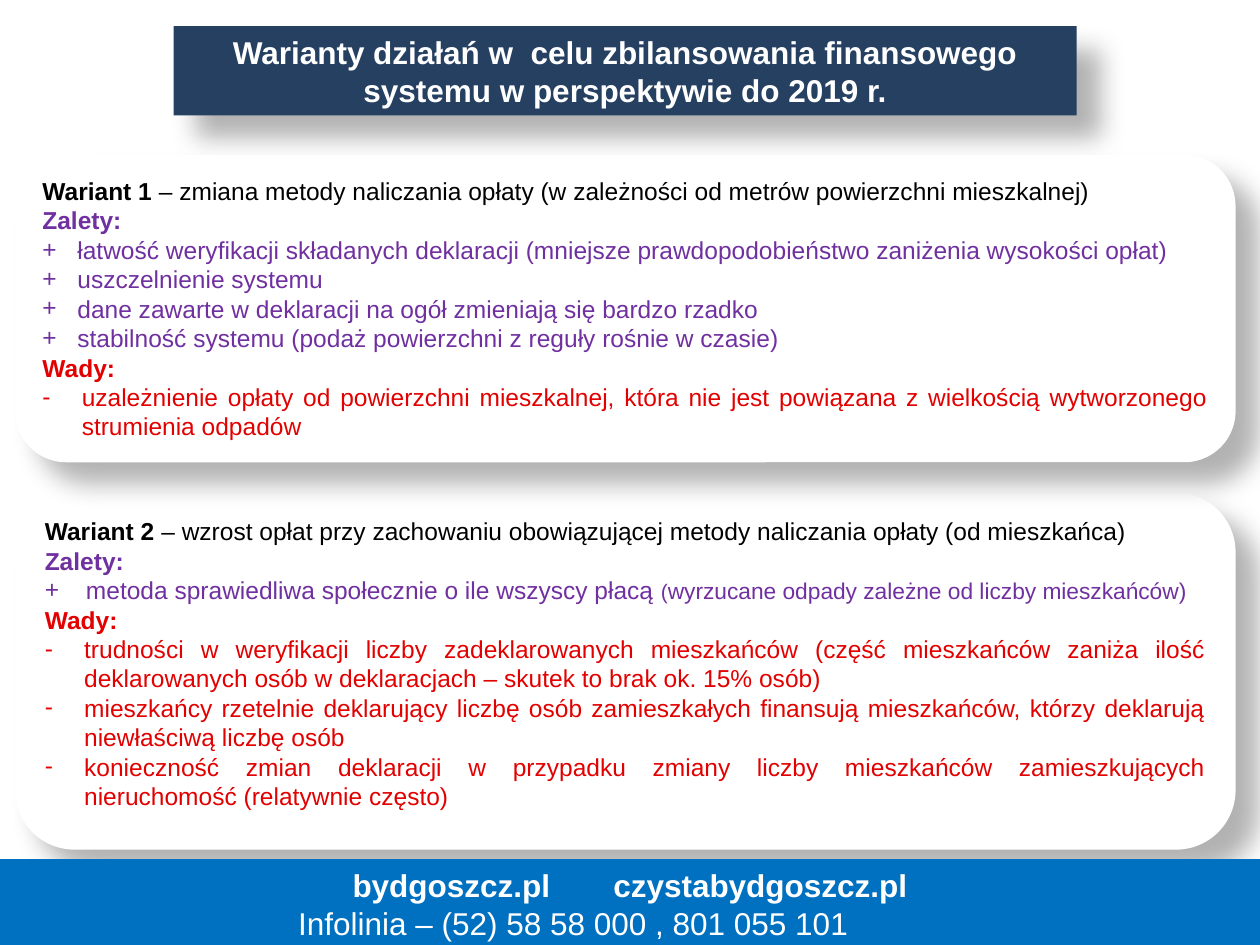
from lxml.etree import SubElement
from pptx import Presentation
from pptx.dml.color import RGBColor
from pptx.enum.shapes import MSO_SHAPE
from pptx.enum.text import MSO_ANCHOR, MSO_AUTO_SIZE, PP_ALIGN
from pptx.oxml.ns import qn
from pptx.util import Pt

COLORS = {
    "title": "254061",
    "card": "FFFFFF",
    "footer": "0070C0",
    "light": "FFFFFF",
    "dark": "000000",
    "advantage": "7030A0",
    "drawback": "E20000",
    "shadow": "000000",
}
FONT = "Arial"
BODY_SIZE = 14
HEADING_SIZE = 18
DASH_INDENT = 22.5

VARIANT_1 = {
    "name": "Wariant 1 ",
    "summary": "– zmiana metody naliczania opłaty (w zależności od metrów powierzchni mieszkalnej)",
    "advantages": [
        [("łatwość weryfikacji składanych deklaracji (mniejsze prawdopodobieństwo "
          "zaniżenia wysokości opłat)", BODY_SIZE)],
        [("uszczelnienie systemu", BODY_SIZE)],
        [("dane zawarte w deklaracji na ogół zmieniają się bardzo rzadko", BODY_SIZE)],
        [("stabilność systemu (podaż powierzchni z reguły rośnie w czasie)", BODY_SIZE)],
    ],
    "drawbacks": [
        "uzależnienie opłaty od powierzchni mieszkalnej, która nie jest powiązana "
        "z wielkością wytworzonego strumienia odpadów",
    ],
}
VARIANT_2 = {
    "name": "Wariant 2 ",
    "summary": "– wzrost opłat przy zachowaniu obowiązującej metody naliczania opłaty (od mieszkańca)",
    "advantages": [
        [("metoda sprawiedliwa społecznie o ile wszyscy płacą ", BODY_SIZE),
         ("(", 12),
         ("wyrzucane odpady zależne od liczby mieszkańców)", 13)],
    ],
    "drawbacks": [
        "trudności w weryfikacji liczby zadeklarowanych mieszkańców (część mieszkańców zaniża "
        "ilość deklarowanych osób w deklaracjach – skutek to brak ok. 15% osób)",
        "mieszkańcy rzetelnie deklarujący liczbę osób zamieszkałych finansują mieszkańców, "
        "którzy deklarują niewłaściwą liczbę osób",
        "konieczność zmian deklaracji w przypadku zmiany liczby mieszkańców zamieszkujących "
        "nieruchomość (relatywnie często)",
    ],
}


def rgb(name):
    return RGBColor.from_string(COLORS[name])


def set_fill(shape, color):
    shape.fill.solid()
    shape.fill.fore_color.rgb = rgb(color)
    shape.line.fill.background()
    shape.shadow.inherit = False


def add_shadow(shape):
    """Give the shape a soft shadow to the lower right."""
    effects = shape._element.spPr.find(qn("a:effectLst"))
    shadow = SubElement(effects, qn("a:outerShdw"), blurRad=str(Pt(15)), dist=str(Pt(18)),
                        dir="2700000", algn="tl", rotWithShape="0")
    color = SubElement(shadow, qn("a:srgbClr"), val=COLORS["shadow"])
    SubElement(color, qn("a:alpha"), val="30000")


def add_run(paragraph, text, color, size=BODY_SIZE, bold=False):
    run = paragraph.add_run()
    run.text = text
    run.font.name = FONT
    run.font.size = Pt(size)
    run.font.bold = bold
    run.font.color.rgb = rgb(color)


def add_paragraph(frame, alignment):
    """Return the next paragraph, using the empty first one if it is free."""
    first = frame.paragraphs[0]
    paragraph = frame.add_paragraph() if first.runs else first
    paragraph.alignment = alignment
    return paragraph


def add_bullet(paragraph, character, indent):
    properties = paragraph._p.get_or_add_pPr()
    properties.set("marL", str(Pt(indent)))
    properties.set("indent", str(-Pt(indent)))
    SubElement(properties, qn("a:buFont"), typeface=FONT)
    SubElement(properties, qn("a:buChar"), char=character)


def place_title(slide, left, top, width, height):
    title = slide.shapes.title
    title.left, title.top, title.width, title.height = Pt(left), Pt(top), Pt(width), Pt(height)
    geometry = SubElement(title._element.spPr, qn("a:prstGeom"), prst="roundRect")
    SubElement(geometry, qn("a:avLst"))
    set_fill(title, "title")
    add_shadow(title)
    frame = title.text_frame
    frame.word_wrap = True
    frame.auto_size = MSO_AUTO_SIZE.NONE
    frame.vertical_anchor = MSO_ANCHOR.MIDDLE
    add_run(add_paragraph(frame, PP_ALIGN.CENTER),
            "Warianty działań w  celu zbilansowania finansowego systemu w perspektywie do 2019 r.",
            "light", HEADING_SIZE, bold=True)


def add_variant(slide, variant, left, top, width, height, plus_indent, plus_alignment):
    """Add a card with the advantages and drawbacks of one variant."""
    card = slide.shapes.add_shape(MSO_SHAPE.ROUNDED_RECTANGLE,
                                  Pt(left), Pt(top), Pt(width), Pt(height))
    set_fill(card, "card")
    add_shadow(card)
    frame = card.text_frame
    frame.word_wrap = True
    frame.vertical_anchor = MSO_ANCHOR.TOP

    heading = add_paragraph(frame, PP_ALIGN.JUSTIFY)
    add_run(heading, variant["name"], "dark", bold=True)
    add_run(heading, variant["summary"], "dark")

    add_run(add_paragraph(frame, PP_ALIGN.JUSTIFY), "Zalety:", "advantage", bold=True)
    for parts in variant["advantages"]:
        paragraph = add_paragraph(frame, plus_alignment)
        add_bullet(paragraph, "+", plus_indent)
        for text, size in parts:
            add_run(paragraph, text, "advantage", size)

    add_run(add_paragraph(frame, PP_ALIGN.JUSTIFY), "Wady:", "drawback", bold=True)
    for text in variant["drawbacks"]:
        paragraph = add_paragraph(frame, PP_ALIGN.JUSTIFY)
        add_bullet(paragraph, "-", DASH_INDENT)
        add_run(paragraph, text, "drawback")


def add_footer(slide, left, top, width, height):
    footer = slide.shapes.add_shape(MSO_SHAPE.RECTANGLE,
                                    Pt(left), Pt(top), Pt(width), Pt(height))
    set_fill(footer, "footer")
    footer.line.color.rgb = rgb("footer")
    footer.line.width = Pt(0.75)
    frame = footer.text_frame
    frame.word_wrap = True
    frame.vertical_anchor = MSO_ANCHOR.MIDDLE
    add_run(add_paragraph(frame, PP_ALIGN.CENTER), "bydgoszcz.pl \t czystabydgoszcz.pl",
            "light", HEADING_SIZE, bold=True)
    hotline = add_paragraph(frame, PP_ALIGN.CENTER)
    hotline._p.get_or_add_pPr().set("marR", str(Pt(65)))
    add_run(hotline, "Infolinia – (52) 58 58 000 , 801 055 101", "light", HEADING_SIZE)


def main():
    presentation = Presentation()
    presentation.slide_width, presentation.slide_height = Pt(720), Pt(540)
    slide = presentation.slides.add_slide(presentation.slide_layouts[5])
    place_title(slide, 99.2, 15, 516, 51)
    add_variant(slide, VARIANT_2, 8.6, 281.5, 697.5, 204, 23.5, PP_ALIGN.LEFT)
    add_variant(slide, VARIANT_1, 8.6, 88.5, 697.5, 175.7, 20, PP_ALIGN.JUSTIFY)
    add_footer(slide, 0, 491, 720, 51)
    presentation.save("out.pptx")


if __name__ == "__main__":
    main()
